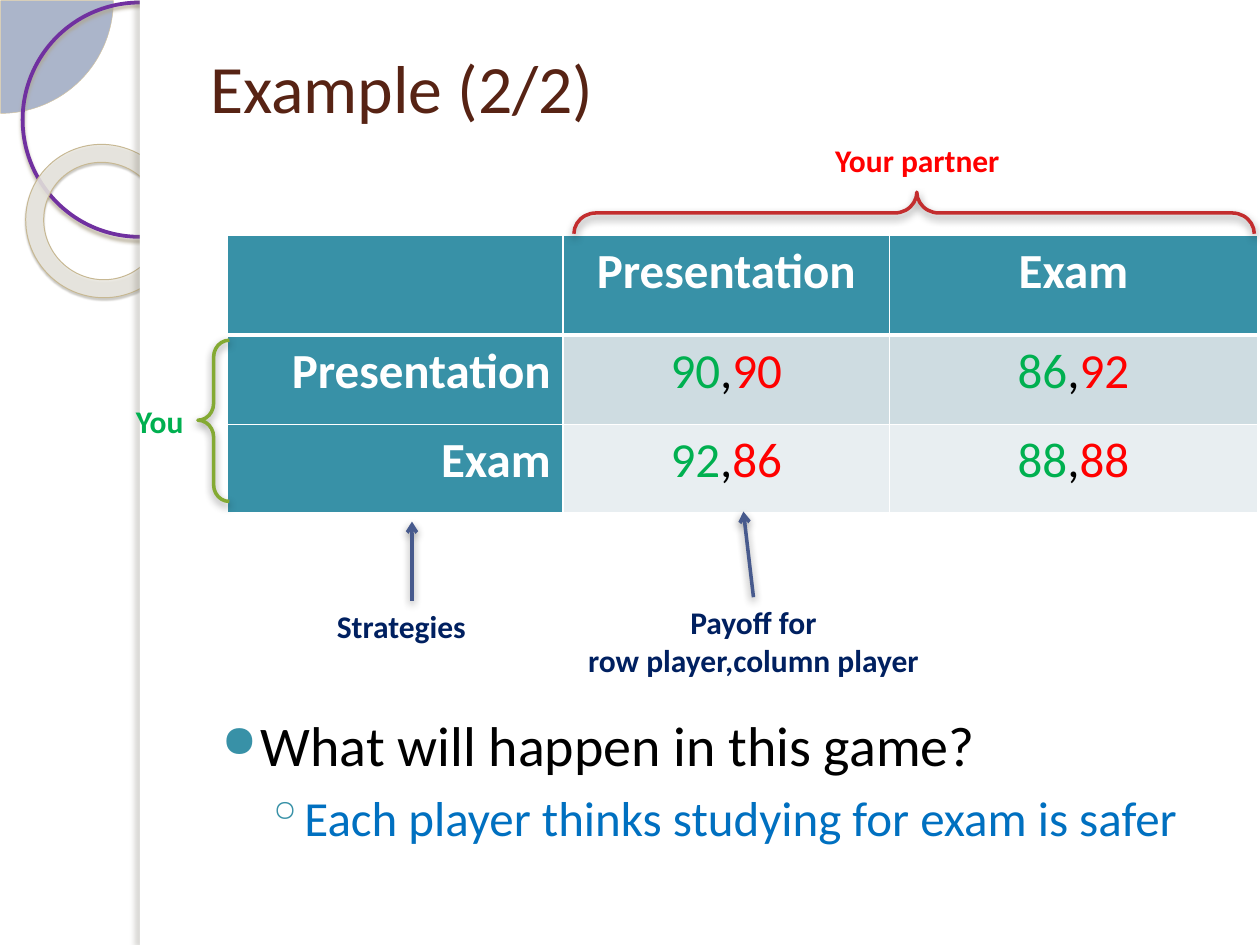
from lxml.etree import SubElement
from pptx import Presentation
from pptx.dml.color import RGBColor as Color
from pptx.enum.shapes import MSO_CONNECTOR as Connector, MSO_SHAPE as Shape
from pptx.enum.text import MSO_ANCHOR as Anchor, PP_ALIGN as Align
from pptx.oxml.ns import qn
from pptx.util import Inches, Pt

THEME = {
    "font": "Calibri",
    "title": 38.7, "bullet": 32, "cell": 28, "label": 18,
    "white": "FFFFFF", "black": "000000", "brown": "572314", "navy": "002060",
    "red": "FF0000", "green": "00B050", "blue": "0070C0", "teal": "3891A7",
    "purple": "7030A0", "sand": "D3C39F", "ring": "EAE8E1", "ring_line": "C7B893",
    "brace_red": "C32D2E", "brace_green": "84AA33", "arrow": "475A8D",
    "bands": ["CEDCE1", "E8EEF1"],
}
SOFT_SHADOW = ("000000", 43, 5, 2, 90)


def finish(shape, line=None, width=1, shadow=None):
    if line:
        shape.line.color.rgb = Color.from_string(THEME[line])
        shape.line.width = Pt(width)
    else:
        shape.line.fill.background()
    effects = SubElement(shape._element.spPr, qn("a:effectLst"))
    if shadow:
        color, alpha, blur, distance, angle = shadow
        outer = SubElement(effects, qn("a:outerShdw"), blurRad=str(Pt(blur)),
                           dist=str(Pt(distance)), dir=str(angle * 60000), rotWithShape="0")
        tint = SubElement(outer, qn("a:srgbClr"), val=color)
        SubElement(tint, qn("a:alpha"), val=str(alpha * 1000))


def write(para, text, size, color, bold=False):
    span = para.add_run()
    span.text = text
    values = {"name": THEME["font"], "size": Pt(THEME[size]), "bold": bold}
    for name, value in values.items():
        setattr(span.font, name, value)
    span.font.color.rgb = Color.from_string(THEME[color])


deck = Presentation()
deck.slide_width, deck.slide_height = Inches(10), Inches(7.5)
page = deck.slides.add_slide(deck.slide_layouts[6])

decorations = [
    (Shape.PIE, (-0.89, -0.89, 1.79, 1.79), 0, [0, 54], "navy", 33, "sand", 0.25, None),
    (Shape.OVAL, (0.18, 0.02, 1.86, 1.86), 0, [], None, 100, "purple", 2.15,
     ("B0A68F", 85, 2, 2, 90)),
    (Shape.DONUT, (0.2, 1.15, 1.23, 1.21), 38.6, [0.118], "ring", 85, "ring_line", 0.58,
     ("5A5444", 35, 1, 1.2, 75)),
    (Shape.RECTANGLE, (1.11, 0, 8.89, 7.5), 0, [], "white", 100, None, 0, None),
    (Shape.RECTANGLE, (1.11, 0, 0.08, 7.5), 0, [], "white", 100, None, 0,
     ("736F63", 25, 3, 3, 180)),
]
braces = [
    (Shape.RIGHT_BRACE, (7.09, -1.01, 0.33, 5.4), 270, [0.532, 0.504], None, 100,
     "brace_red", 2, SOFT_SHADOW),
    (Shape.RIGHT_BRACE, (1.57, 2.7, 0.25, 1.28), 180, [0.532, 0.504], None, 100,
     "brace_green", 2, SOFT_SHADOW),
]

frame = page.shapes.add_table(3, 3, *map(Inches, (1.8, 1.87, 8.19, 2.2)))
table = frame.table
for column, width in zip(table.columns, (2.67, 2.59, 2.92)):
    column.width = Inches(width)
for row, height in zip(table.rows, (0.79, 0.71, 0.7)):
    row.height = Inches(height)

strategies = ["Presentation", "Exam"]
payoffs = [[("90", "90"), ("86", "92")], [("92", "86"), ("88", "88")]]
for row in range(3):
    for column in range(3):
        cell = table.cell(row, column)
        para = cell.text_frame.paragraphs[0]
        para.alignment = Align.CENTER if column else Align.RIGHT
        fill = THEME["teal"]
        if row and column:
            fill = THEME["bands"][row - 1]
            yours, partners = payoffs[row - 1][column - 1]
            for text, color in ((yours, "green"), (",", "black"), (partners, "red")):
                write(para, text, "cell", color)
        elif row or column:
            write(para, strategies[max(row, column) - 1], "cell", "white", True)
        properties = cell._tc.get_or_add_tcPr()
        for side in ("lnL", "lnR", "lnT", "lnB"):
            heavy = (row, side) in ((0, "lnB"), (1, "lnT"))
            border = SubElement(properties, qn(f"a:{side}"), w=str(Pt(3 if heavy else 1)))
            solid = SubElement(border, qn("a:solidFill"))
            SubElement(solid, qn("a:srgbClr"), val=THEME["white"])
        cell.fill.solid()
        cell.fill.fore_color.rgb = Color.from_string(fill)

for kind, place, rotation, adjustments, fill, alpha, line, width, shadow in decorations + braces:
    shape = page.shapes.add_shape(kind, *map(Inches, place))
    shape.rotation = rotation
    for index, value in enumerate(adjustments):
        shape.adjustments[index] = value
    if fill:
        shape.fill.solid()
        shape.fill.fore_color.rgb = Color.from_string(THEME[fill])
        tint = shape._element.spPr.find(qn("a:solidFill"))[0]
        SubElement(tint, qn("a:alpha"), val=str(alpha * 1000))
    else:
        shape.fill.background()
    finish(shape, line, width, shadow)
    if kind == Shape.RIGHT_BRACE:
        continue
    frame._element.addprevious(shape._element)

labels = [
    ((1.57, 0.3, 8.2, 0.77), ["Example (2/2)"], "title", "brown", False, Align.LEFT),
    ((6.53, 1.07, 1.81, 0.4), ["Your partner"], "label", "red", True, Align.LEFT),
    ((0.98, 3.14, 0.66, 0.4), ["You"], "label", "green", True, Align.LEFT),
    ((2.24, 4.77, 1.89, 0.4), ["Strategies"], "label", "navy", True, Align.CENTER),
    ((4.13, 4.74, 3.7, 0.71), ["Payoff for", "row player,column player"],
     "label", "navy", True, Align.CENTER),
]
for place, lines, size, color, bold, alignment in labels:
    box = page.shapes.add_textbox(*map(Inches, place))
    box.text_frame.word_wrap = True
    box.text_frame.vertical_anchor = Anchor.MIDDLE if size == "title" else Anchor.TOP
    for index, text in enumerate(lines):
        para = box.text_frame.add_paragraph() if index else box.text_frame.paragraphs[0]
        para.alignment = alignment
        write(para, text, size, color, bold)

for ends in ((3.27, 4.77, 3.27, 4.14), (5.98, 4.74, 5.9, 4.06)):
    arrow = page.shapes.add_connector(Connector.STRAIGHT, *map(Inches, ends))
    finish(arrow, "arrow", 2, SOFT_SHADOW)
    SubElement(arrow.line._get_or_add_ln(), qn("a:tailEnd"), type="arrow")

bullets = [
    ("What will happen in this game?", "bullet", "black", 0, 0.4, -0.31, 0, "●", 80),
    ("Each player thinks studying for exam is safer", "cell", "blue", 1, 0.7, -0.26, 5.5, "◦", 100),
]
box = page.shapes.add_textbox(*map(Inches, (1.57, 5.59, 8.2, 1.24)))
box.text_frame.word_wrap = True
for index, (text, size, color, level, margin, indent, before, mark, scale) in enumerate(bullets):
    para = box.text_frame.add_paragraph() if index else box.text_frame.paragraphs[0]
    para.level = level
    para.space_before = Pt(before)
    properties = para._p.get_or_add_pPr()
    properties.set("marL", str(Inches(margin)))
    properties.set("indent", str(Inches(indent)))
    tint = SubElement(properties, qn("a:buClr"))
    SubElement(tint, qn("a:srgbClr"), val=THEME["teal"])
    SubElement(properties, qn("a:buSzPct"), val=str(scale * 1000))
    SubElement(properties, qn("a:buChar"), char=mark)
    write(para, text, size, color)

deck.save("out.pptx")
